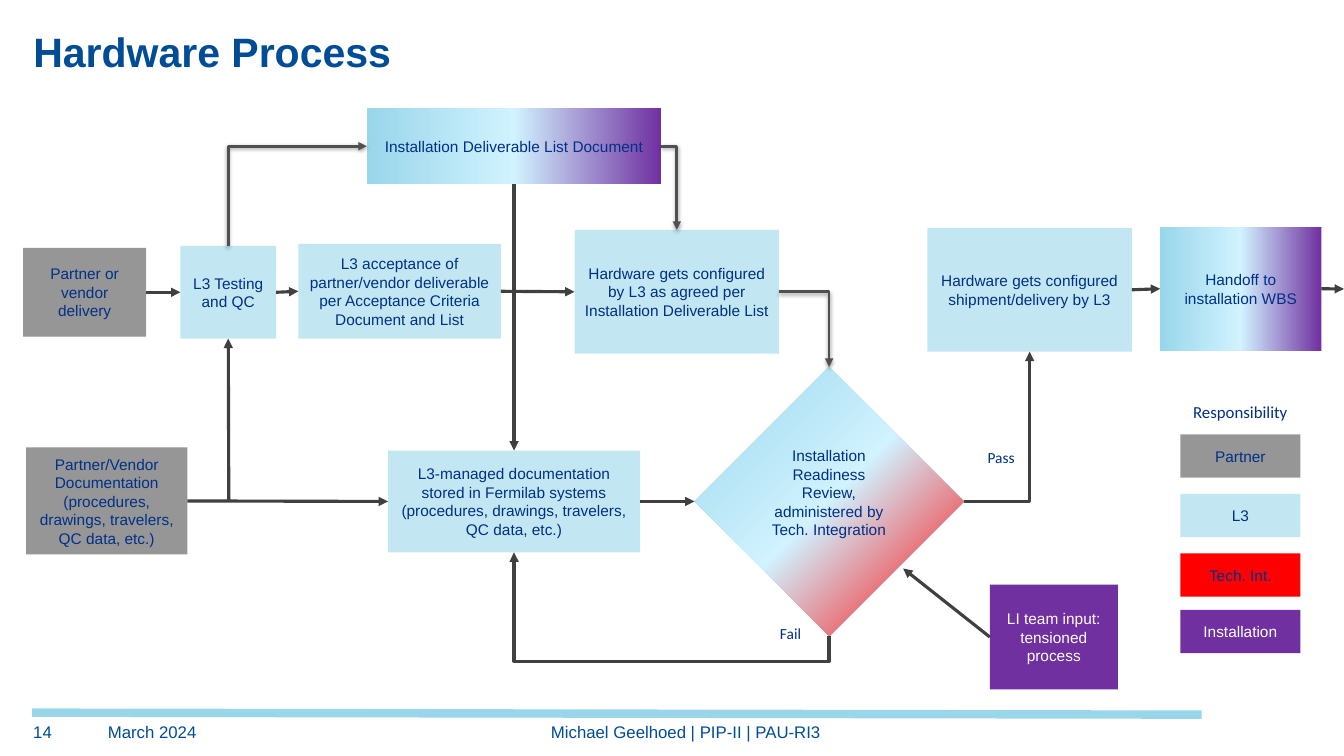
"""Build the Hardware Process flow chart slide."""
from dataclasses import dataclass

from lxml import etree
from pptx import Presentation
from pptx.dml.color import RGBColor
from pptx.enum.shapes import MSO_CONNECTOR, MSO_SHAPE
from pptx.enum.text import MSO_ANCHOR, MSO_AUTO_SIZE, PP_ALIGN
from pptx.oxml import parse_xml
from pptx.oxml.ns import nsdecls, qn
from pptx.util import Inches, Pt

RECT, DIAMOND = MSO_SHAPE.RECTANGLE, MSO_SHAPE.DIAMOND
STRAIGHT, ELBOW = MSO_CONNECTOR.STRAIGHT, MSO_CONNECTOR.ELBOW
LEFT_ALIGN, CENTER = PP_ALIGN.LEFT, PP_ALIGN.CENTER
TOP_ANCHOR, MIDDLE, BOTTOM_ANCHOR = MSO_ANCHOR.TOP, MSO_ANCHOR.MIDDLE, MSO_ANCHOR.BOTTOM
NO_AUTOSIZE = MSO_AUTO_SIZE.NONE
TOP, LEFT, BOTTOM, RIGHT = range(4)
COLUMNS, ROWS = 40, 22.5
CELL = Inches(13.333) / COLUMNS


@dataclass(frozen=True)
class Theme:
    """Colours, fonts and type sizes of the slide."""
    navy: str = "003087"
    heading: str = "004C97"
    white: str = "FFFFFF"
    partner: str = "969696"
    l3: str = "C2E6F2"
    tech: str = "FF0000"
    installation: str = "7030A0"
    sky: str = "99D6EA"
    pale: str = "D1F2FF"
    arrow: str = "404040"
    soft_arrow: str = "505050"
    font: str = "Arial"
    label_font: str = "Calibri"
    title_size: float = 29.3
    footer_size: float = 12
    box_size: float = 11


THEME = Theme()


def grid(*cells):
    """Turn grid columns and rows into lengths."""
    return [round(cell * CELL) for cell in cells]


def write(frame, text, size, color, font=THEME.font, align=LEFT_ALIGN, bold=False):
    """Write each line of text as a paragraph with one run."""
    frame.word_wrap = True
    for index, line in enumerate(text.split("\n")):
        paragraph = frame.add_paragraph() if index else frame.paragraphs[0]
        paragraph.alignment = align
        run = paragraph.add_run()
        run.text = line
        run.font.size, run.font.name, run.font.bold = Pt(size), font, bold
        run.font.color.rgb = RGBColor.from_string(color)


def clear_insets(frame):
    """Remove the inner margins of a text frame."""
    frame.margin_left = frame.margin_right = frame.margin_top = frame.margin_bottom = 0


def add_title(slide, text):
    """Fill and place the title placeholder."""
    title = slide.shapes.title
    title.left, title.top, title.width, title.height = grid(0.99, 0.84, 38, 1.41)
    frame = title.text_frame
    write(frame, text, THEME.title_size, THEME.heading, bold=True)
    clear_insets(frame)
    frame.auto_size, frame.vertical_anchor = NO_AUTOSIZE, BOTTOM_ANCHOR


def add_label(slide, text, place, size, color=THEME.navy, font=THEME.label_font,
              align=LEFT_ALIGN):
    """Add a text label and return its text frame."""
    frame = slide.shapes.add_textbox(*grid(*place)).text_frame
    write(frame, text, size, color, font, align)
    frame.vertical_anchor = TOP_ANCHOR
    return frame


def blend(shape, last, angle):
    """Fill a shape with a gradient from the L3 blues to a last colour."""
    stops = "".join(
        f'<a:gs pos="{share * 1000}"><a:srgbClr val="{color}"/></a:gs>'
        for share, color in ((0, THEME.sky), (50, THEME.pale), (100, last)))
    gradient = parse_xml(
        f'<a:gradFill {nsdecls("a")} rotWithShape="1"><a:gsLst>{stops}</a:gsLst>'
        f'<a:lin ang="{angle * 60000}" scaled="0"/></a:gradFill>')
    shape.element.spPr.find(qn("a:prstGeom")).addnext(gradient)


def add_step(slide, text, place, fill=THEME.l3, color=THEME.navy, shape_kind=RECT,
             shared_with=None, angle=0):
    """Add a process step, blended when responsibility is shared."""
    step = slide.shapes.add_shape(shape_kind, *grid(*place))
    step.shadow.inherit = False
    if shared_with:
        blend(step, shared_with, angle)
    else:
        step.fill.solid()
        step.fill.fore_color.rgb = RGBColor.from_string(fill)
    step.line.fill.background()
    write(step.text_frame, text, THEME.box_size, color, align=CENTER)
    step.text_frame.vertical_anchor = MIDDLE
    return step


def add_line(slide, start, end, color=THEME.arrow, width=2.25, head="tailEnd",
             kind=STRAIGHT, shadow=False):
    """Draw a line between two points, with an arrowhead when head is given."""
    line = slide.shapes.add_connector(kind, *start, *end)
    line.line.color.rgb = RGBColor.from_string(color)
    line.line.width = Pt(width)
    properties = line._element.spPr
    if head:
        etree.SubElement(properties.find(qn("a:ln")), qn(f"a:{head}"), type="triangle")
    effects = etree.SubElement(properties, qn("a:effectLst"))
    if shadow:
        effects.append(parse_xml(
            f'<a:outerShdw {nsdecls("a")} blurRad="{Pt(3.1)}" dist="{Pt(1.6)}" '
            'dir="5400000" rotWithShape="0"><a:srgbClr val="000000">'
            '<a:alpha val="38000"/></a:srgbClr></a:outerShdw>'))
    return line


def port(step, side):
    """Return the middle point of one side of a step."""
    across = {LEFT: 0, RIGHT: step.width}.get(side, step.width // 2)
    down = {TOP: 0, BOTTOM: step.height}.get(side, step.height // 2)
    return step.left + across, step.top + down


def connect(slide, source, source_side, target, target_side, **style):
    """Glue a connector between the sides of two steps."""
    link = add_line(slide, port(source, source_side), port(target, target_side), **style)
    link.begin_connect(source, source_side)
    link.end_connect(target, target_side)
    return link


def connect_corner(slide, source, source_side, target, target_side, **style):
    """Glue a connector that turns once, running sideways first."""
    link = connect(slide, source, source_side, target, target_side, kind=ELBOW, **style)
    link._element.spPr.find(qn("a:prstGeom")).set("prst", "bentConnector2")


def connect_under(slide, source, target, drop):
    """Glue a connector that leaves and enters from below, running left."""
    link = connect(slide, source, BOTTOM, target, BOTTOM, kind=ELBOW)
    (start_x, start_y), (end_x, end_y) = port(source, BOTTOM), port(target, BOTTOM)
    span, rise = start_x - end_x, start_y - end_y
    link.left, link.top = (start_x + end_x - rise) // 2, (start_y + end_y - span) // 2
    link.width, link.height = rise, span
    frame = link._element.spPr.find(qn("a:xfrm"))
    frame.set("rot", "5400000")
    frame.set("flipH", "1")
    frame.set("flipV", "0")
    adjustments = link._element.spPr.find(qn("a:prstGeom")).find(qn("a:avLst"))
    share = round(-drop * CELL / rise * 100000)
    etree.SubElement(adjustments, qn("a:gd"), name="adj1", fmla=f"val {share}")


def add_footer(slide):
    """Add the rule and the footer texts."""
    add_line(slide, grid(0.96, 21.21), grid(35.76, 21.27), THEME.sky, 6, head=None)
    for text, left, width, align in (
            ("14", 0.99, 1.8, LEFT_ALIGN), ("March 2024", 3.21, 2.94, LEFT_ALIGN),
            ("Michael Geelhoed | PIP-II | PAU-RI3", 6.72, 27.39, CENTER)):
        clear_insets(add_label(slide, text, (left, 21.48, width, 0.8), THEME.footer_size,
                               THEME.heading, THEME.font, align))


def add_legend(slide):
    """Add the responsibility legend."""
    add_label(slide, "Responsibility", (35.13, 11.82, 3.57, 0.9), THEME.footer_size,
              align=CENTER)
    for text, top, fill, color in (
            ("Partner", 12.93, THEME.partner, THEME.navy),
            ("L3", 14.7, THEME.l3, THEME.navy),
            ("Tech. Int.", 16.47, THEME.tech, THEME.navy),
            ("Installation", 18.15, THEME.installation, THEME.white)):
        add_step(slide, text, (35.13, top, 3.57, 1.29), fill, color)


def add_process(slide):
    """Add the process steps and the arrows between them."""
    delivery = add_step(slide, "Partner or vendor delivery", (0.69, 7.38, 3.66, 2.64),
                        THEME.partner)
    testing = add_step(slide, "L3 Testing and QC", (5.37, 7.32, 2.85, 2.76))
    acceptance = add_step(
        slide, "L3 acceptance of partner/vendor deliverable\n"
        "per Acceptance Criteria Document and List", (8.88, 7.26, 6.03, 2.82))
    records = add_step(
        slide, "L3-managed documentation stored in Fermilab systems "
        "(procedures, drawings, travelers, QC data, etc.)", (11.55, 13.41, 7.5, 3.03))
    handoff = add_step(slide, "Handoff to installation WBS", (34.53, 6.75, 4.8, 3.69),
                       shared_with=THEME.installation)
    shipment = add_step(slide, "Hardware gets configured shipment/delivery by L3",
                        (27.6, 6.78, 6.09, 3.69))
    review = add_step(
        slide, "Installation Readiness Review, administered by Tech. Integration",
        (20.67, 10.92, 8.01, 8.01), shape_kind=DIAMOND, shared_with=THEME.tech, angle=45)
    review.text_frame.margin_bottom = Inches(0.22)
    vendor_records = add_step(
        slide, "Partner/Vendor Documentation (procedures, drawings, travelers, "
        "QC data, etc.)", (0.78, 13.32, 4.8, 3.18), THEME.partner)
    deliverables = add_step(slide, "Installation Deliverable List Document",
                            (10.92, 3.21, 8.76, 2.28), shared_with=THEME.installation)
    configuration = add_step(
        slide, "Hardware gets configured by L3 as agreed per Installation Deliverable List",
        (17.1, 6.84, 6.09, 3.69))
    team_input = add_step(slide, "LI team input:\ntensioned process",
                          (29.46, 17.4, 3.81, 3.12), THEME.installation, THEME.white)

    for source, target in ((delivery, testing), (testing, acceptance),
                           (acceptance, configuration), (vendor_records, records),
                           (records, review), (shipment, handoff)):
        connect(slide, source, RIGHT, target, LEFT)
    connect(slide, deliverables, BOTTOM, records, TOP)
    soft = {"color": THEME.soft_arrow, "width": 2, "shadow": True}
    connect_corner(slide, deliverables, RIGHT, configuration, TOP, **soft)
    connect_corner(slide, configuration, RIGHT, review, TOP, **soft)
    connect_corner(slide, deliverables, LEFT, testing, TOP, head="headEnd", **soft)
    connect_corner(slide, review, RIGHT, shipment, BOTTOM)
    connect_under(slide, review, records, 0.75)
    add_line(slide, grid(6.81, 14.91), port(testing, BOTTOM))
    add_line(slide, port(team_input, LEFT), grid(26.88, 16.92))
    add_line(slide, port(handoff, RIGHT), grid(COLUMNS, 8.6))
    add_label(slide, "Fail", (22.92, 18.42, 1.5, 0.87), THEME.box_size)
    add_label(slide, "Pass", (29.1, 13.2, 1.71, 0.87), THEME.box_size)


def main():
    """Build and save the slide."""
    deck = Presentation()
    deck.slide_width, deck.slide_height = grid(COLUMNS, ROWS)
    slide = deck.slides.add_slide(deck.slide_layouts[5])
    add_title(slide, "Hardware Process")
    add_footer(slide)
    add_process(slide)
    add_legend(slide)
    deck.save("out.pptx")


if __name__ == "__main__":
    main()
